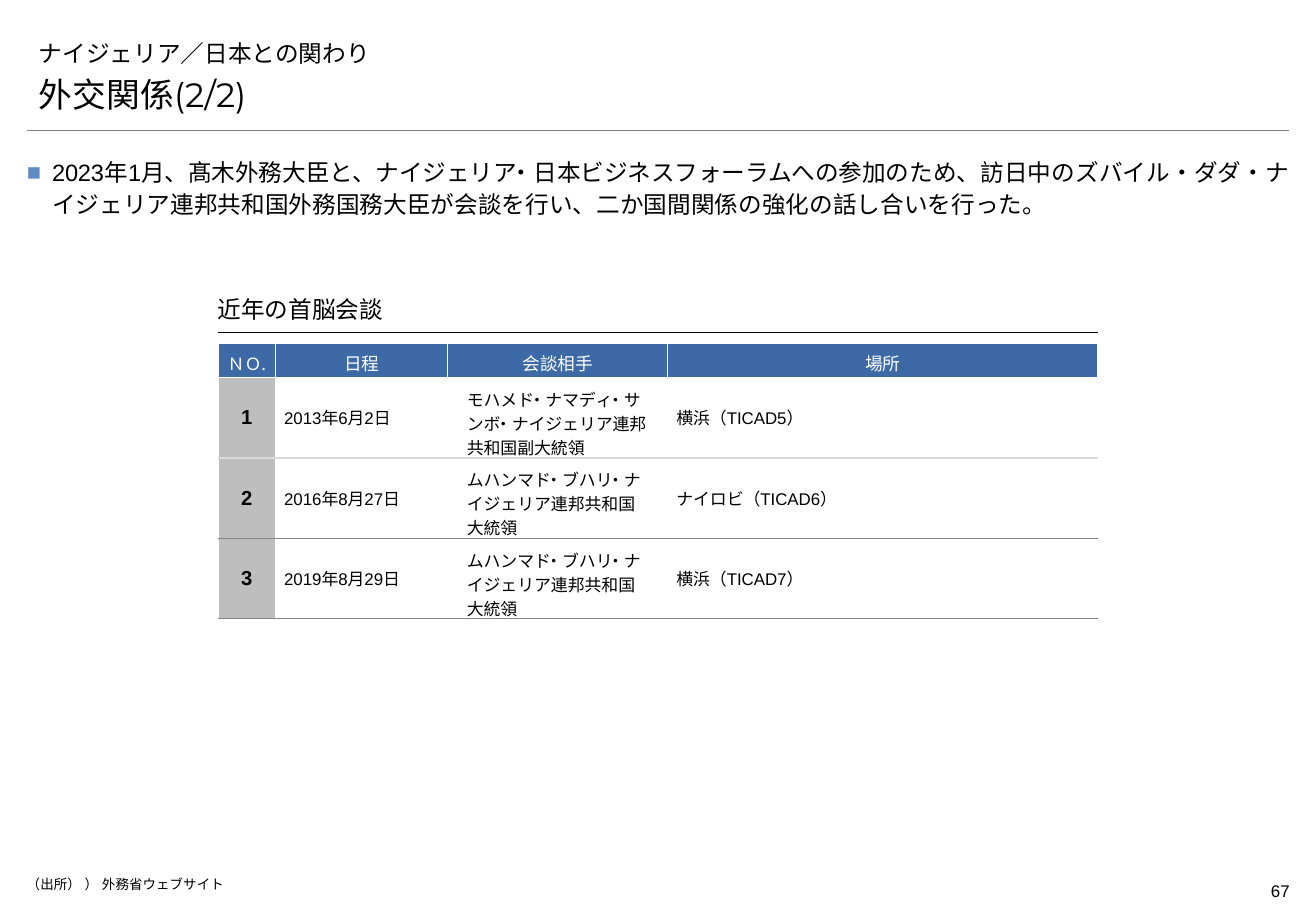
"""Build the slide on diplomatic relations between Nigeria and Japan."""
from lxml import etree
from pptx import Presentation
from pptx.dml.color import RGBColor
from pptx.enum.shapes import MSO_CONNECTOR as Connector
from pptx.enum.text import MSO_ANCHOR as Anchor, MSO_AUTO_SIZE as AutoSize, PP_ALIGN as Align
from pptx.oxml.ns import qn
from pptx.util import Cm, Pt

BLACK = RGBColor(0x00, 0x00, 0x00)
WHITE = RGBColor(0xFF, 0xFF, 0xFF)
BLUE = RGBColor(0x3D, 0x6A, 0xA7)
BULLET_BLUE = RGBColor(0x5F, 0x8A, 0xC3)
LABEL_GRAY = RGBColor(0xBE, 0xBE, 0xBE)
LIGHT_GRAY = RGBColor(0xD9, 0xD9, 0xD9)
ROW_GRAY = RGBColor(0x86, 0x86, 0x86)
RULE_GRAY = RGBColor(0x7F, 0x7F, 0x7F)
GOTHIC = "Noto Sans CJK JP"


def write(frame, text, size=10, font="Arial", east=None, color=BLACK, bold=False,
          align=Align.LEFT, anchor=Anchor.TOP, margins=(0, 0, 0, 0), spacing=0, tight_dots=False):
    frame.margin_left, frame.margin_top, frame.margin_right, frame.margin_bottom = map(Cm, margins)
    frame.vertical_anchor = anchor
    para = (frame.text_frame if hasattr(frame, "text_frame") else frame).paragraphs[0]
    para.alignment = align
    pieces = [(text, spacing)]
    if tight_dots:
        *names, ending = text.split("・")
        pieces = [piece for name in names
                  for piece in ((name[:-1], spacing), (name[-1] + "・", -33 * size))]
        pieces.append((ending, spacing))
    for piece, gap in pieces:
        span = para.add_run()
        span.text = piece
        span.font.size = Pt(size)
        span.font.bold = bold
        span.font.name = font
        span.font.color.rgb = color
        span.font._element.set("spc", str(gap))
        etree.SubElement(span.font._element, qn("a:ea"), typeface=east or font)
    return para


deck = Presentation()
deck.slide_width, deck.slide_height = Cm(27.51), Cm(19.05)
page = deck.slides.add_slide(deck.slide_layouts[3])
topic, heading, message = page.placeholders

for start, end, y, color, width in [(0.56, 26.95, 2.72, RULE_GRAY, 0.25),
                                    (4.55, 22.96, 6.96, BLACK, 0.75)]:
    rule = page.shapes.add_connector(Connector.STRAIGHT, Cm(start), Cm(y), Cm(end), Cm(y))
    rule.line.color.rgb = color
    rule.line.width = Pt(width)
    etree.SubElement(rule._element.spPr, qn("a:effectLst"))

number, source, caption = [page.shapes.add_textbox(0, 0, 0, 0) for _ in range(3)]
for box, left, top, width, height in [
    (topic, 0.56, 0.68, 26.39, 0.86),
    (heading, 0.56, 1.4, 26.42, 1.12),
    (message, 0.56, 3.23, 26.39, 1.24),
    (number, 24.95, 18.29, 2.01, 0.69),
    (source, 0.56, 18.31, 26.42, 0.41),
    (caption, 4.55, 6.17, 18.39, 0.79),
]:
    box.left, box.top, box.width, box.height = Cm(left), Cm(top), Cm(width), Cm(height)
    box.text_frame.word_wrap = True
    box.text_frame.auto_size = AutoSize.NONE

title_margins = (0.25, 0.13, 0.25, 0.13)
write(topic.text_frame, "ナイジェリア／日本との関わり", size=14, font="Montserrat", east=GOTHIC,
      anchor=Anchor.BOTTOM, margins=title_margins)
para = write(heading.text_frame, "外交関係(2/2)", size=20, font="Montserrat", east=GOTHIC,
             anchor=Anchor.BOTTOM, margins=title_margins)
para.space_before = Pt(0)
properties = para._p.get_or_add_pPr()
properties.set("marL", "0")
properties.set("indent", "0")
etree.SubElement(properties, qn("a:buNone"))

write(message.text_frame, "2023年1月、髙木外務大臣と、ナイジェリア・日本ビジネスフォーラムへの参加のため、",
      size=14, align=Align.JUSTIFY, spacing=-15, tight_dots=True)
para = write(message.text_frame,
             "訪日中のズバイル・ダダ・ナイジェリア連邦共和国外務国務大臣が会談を行い、"
             "二か国間関係の強化の話し合いを行った。",
             size=14, font=GOTHIC, align=Align.JUSTIFY)
para.line_spacing = Pt(19)
para.space_before = Pt(0)
para.space_after = Pt(2)
properties = para._p.get_or_add_pPr()
properties.set("marL", str(Cm(0.53)))
properties.set("indent", str(-Cm(0.53)))
bullet_color = etree.SubElement(properties, qn("a:buClr"))
etree.SubElement(bullet_color, qn("a:srgbClr"), val=str(BULLET_BLUE))
etree.SubElement(properties, qn("a:buFont"), typeface="Arial")
etree.SubElement(properties, qn("a:buChar"), char="■")

write(number.text_frame, "67", align=Align.RIGHT, margins=(0, 0.13, 0, 0.13))
write(source.text_frame, "（出所） ） 外務省ウェブサイト", size=8)
write(caption.text_frame, "近年の首脳会談", size=14, font="Montserrat", east=GOTHIC,
      anchor=Anchor.BOTTOM, margins=(0, 0.13, 0, 0.2))

meetings = [
    ("ＮＯ.", "日程", "会談相手", "場所"),
    ("1", "2013年6月2日", "モハメド・ナマディ・サンボ・ナイジェリア連邦共和国副大統領", "横浜（TICAD5）"),
    ("2", "2016年8月27日", "ムハンマド・ブハリ・ナイジェリア連邦共和国大統領", "ナイロビ（TICAD6）"),
    ("3", "2019年8月29日", "ムハンマド・ブハリ・ナイジェリア連邦共和国大統領", "横浜（TICAD7）"),
]
row_lines = [(WHITE, 0.5), (WHITE, 0.5), (LIGHT_GRAY, 1), (ROW_GRAY, 0.5), (ROW_GRAY, 0.5)]
table = page.shapes.add_table(4, 4, Cm(4.56), Cm(7.19), Cm(18.39), Cm(5.71)).table
table.first_row = table.horz_banding = False
for column, width in zip(table.columns, (1.2, 3.6, 4.6, 8.99)):
    column.width = Cm(width)
for row, height in zip(table.rows, (0.7, 1.67, 1.67, 1.67)):
    row.height = Cm(height)

for row, texts in enumerate(meetings):
    for column, text in enumerate(texts):
        cell = table.cell(row, column)
        if row == 0:
            write(cell, text, size=10 if column == 0 else 10.5, font=GOTHIC, color=WHITE,
                  align=Align.CENTER, anchor=Anchor.MIDDLE, margins=(0.1, 0.1, 0.1, 0))
        elif column == 0:
            write(cell, text, size=12, bold=True, align=Align.CENTER, anchor=Anchor.MIDDLE,
                  margins=(0.1, 0.08, 0.1, 0.08))
        elif column == 2:
            para = write(cell, text, anchor=Anchor.MIDDLE, margins=(0.4, 0.18, 0.38, 0),
                         tight_dots=True)
            para.line_spacing = Pt(14.2)
        else:
            write(cell, text, anchor=Anchor.MIDDLE, margins=(0.18, 0.14, 0.18, 0.08))
        edges = [("L", WHITE, 0.5), ("R", WHITE, 0.5),
                 ("T", *row_lines[row]), ("B", *row_lines[row + 1])]
        for side, color, width in edges:
            edge = etree.SubElement(cell._tc.get_or_add_tcPr(), qn(f"a:ln{side}"), w=str(Pt(width)))
            edge_fill = etree.SubElement(edge, qn("a:solidFill"))
            etree.SubElement(edge_fill, qn("a:srgbClr"), val=str(color))
        if row == 0 or column == 0:
            cell.fill.solid()
            cell.fill.fore_color.rgb = BLUE if row == 0 else LABEL_GRAY
        else:
            cell.fill.background()

deck.save("out.pptx")
